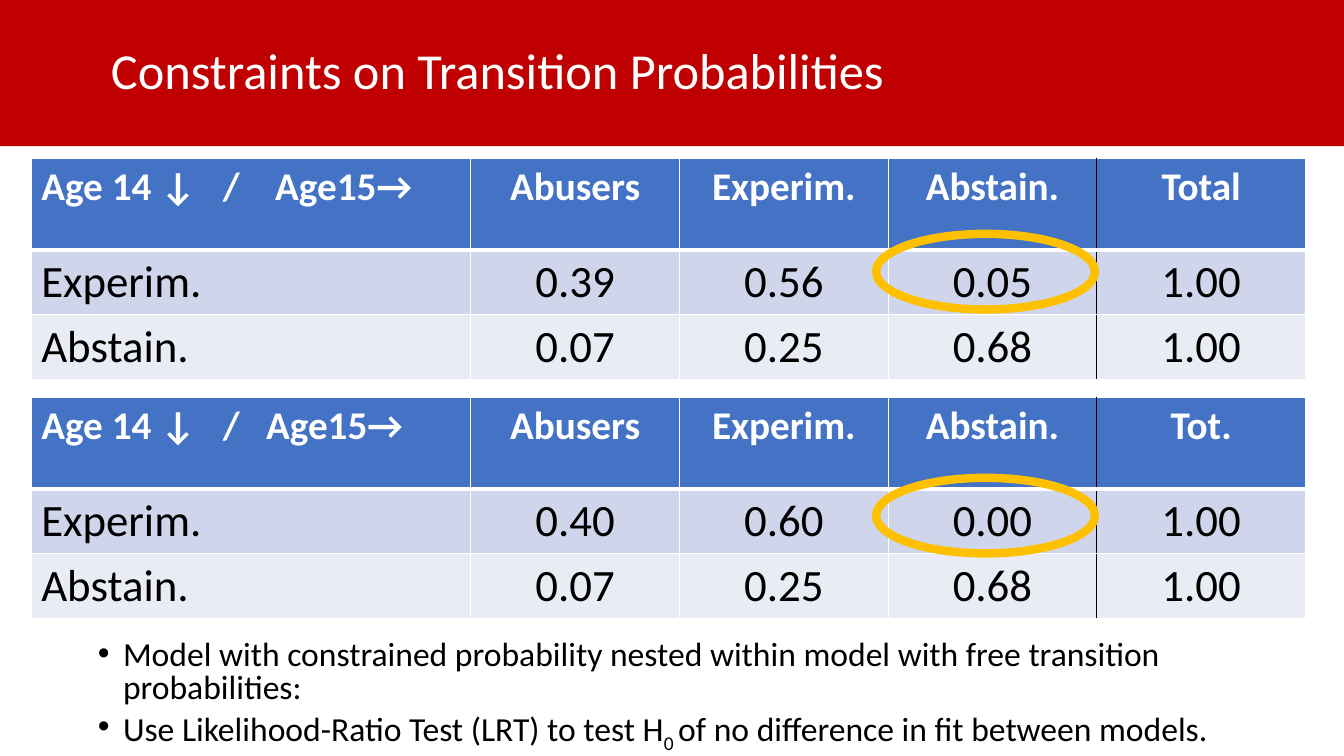
import pptx
import pptx.dml.color
import pptx.enum.shapes
import pptx.enum.text
import pptx.oxml
import pptx.oxml.ns
import pptx.util
from pptx.util import Inches

RGBColor = pptx.dml.color.RGBColor
RED = RGBColor(0xC0, 0x00, 0x00)
WHITE = RGBColor(0xFF, 0xFF, 0xFF)
BLACK = RGBColor(0x00, 0x00, 0x00)
BLUE = RGBColor(0x44, 0x72, 0xC4)
BAND_DARK = RGBColor(0xCF, 0xD5, 0xEA)
BAND_LIGHT = RGBColor(0xE9, 0xEB, 0xF5)
GOLD = RGBColor(0xFF, 0xC0, 0x00)

FONT = "Calibri"
ALIGN = pptx.enum.text.PP_ALIGN
ROW_FILLS = [BLUE, BAND_DARK, BAND_LIGHT]
COLUMN_WIDTHS = [4.36] + [2.07] * 4
ROW_HEIGHTS = [0.91, 0.64, 0.64]
TOTAL_COLUMN = 4


def add_text(paragraph, text, size=24, color=BLACK, bold=False, baseline=0):
    """Append a formatted run to a paragraph."""
    run = paragraph.add_run()
    run.text = text
    run.font.name = FONT
    run.font.size = pptx.util.Pt(size)
    run.font.color.rgb = color
    run.font.bold = bold
    if baseline:
        run._r.get_or_add_rPr().set("baseline", str(baseline * 1000))


def add_xml(parent, xml):
    """Append a DrawingML element given as markup to a parent element."""
    namespace = pptx.oxml.ns.nsdecls("a")
    parent.append(pptx.oxml.parse_xml(xml.replace(" ", f" {namespace} ", 1)))


def set_tab_stops(paragraph, positions):
    """Give a paragraph left tab stops at positions in inches."""
    stops = "".join(f'<a:tab pos="{Inches(p)}" algn="l"/>' for p in positions)
    add_xml(paragraph._p.get_or_add_pPr(), f"<a:tabLst >{stops}</a:tabLst>")


def set_bullet(paragraph):
    """Format a paragraph as a second-level bullet with a hanging indent."""
    paragraph.level = 1
    paragraph.line_spacing = 0.8
    paragraph.space_before = pptx.util.Pt(5)
    properties = paragraph._p.get_or_add_pPr()
    properties.set("marL", str(Inches(0.75)))
    properties.set("indent", str(Inches(-0.25)))
    add_xml(properties, '<a:buFont typeface="Arial"/>')
    add_xml(properties, '<a:buChar char="•"/>')


def set_borders(cell, row, column):
    """Draw white cell borders, with a black rule before the total column."""
    for side in "LRTB":
        before_total = (side, column) in [("R", TOTAL_COLUMN - 1), ("L", TOTAL_COLUMN)]
        color = BLACK if before_total else WHITE
        under_header = (side, row) in [("B", 0), ("T", 1)]
        width = pptx.util.Pt(3 if under_header else 1)
        add_xml(
            cell._tc.get_or_add_tcPr(),
            f'<a:ln{side} w="{width}"><a:solidFill><a:srgbClr val="{color}"/>'
            f"</a:solidFill></a:ln{side}>",
        )


def place(shape, left, top, width, height):
    """Set the position and size of a shape in inches."""
    shape.left, shape.top = Inches(left), Inches(top)
    shape.width, shape.height = Inches(width), Inches(height)


def add_title(slide, text):
    """Turn the title placeholder into a red banner."""
    title = slide.shapes.title
    place(title, 0, 0, 13.33, 1.45)
    title.fill.solid()
    title.fill.fore_color.rgb = RED
    frame = title.text_frame
    frame.auto_size = pptx.enum.text.MSO_AUTO_SIZE.NONE
    frame.vertical_anchor = pptx.enum.text.MSO_ANCHOR.MIDDLE
    frame.margin_left = Inches(1.1)
    paragraph = frame.paragraphs[0]
    paragraph.alignment = ALIGN.LEFT
    paragraph.line_spacing = 0.9
    add_text(paragraph, text, size=36, color=WHITE)


def add_transition_table(slide, top, rows, corner_tabs):
    """Add a table of transition probabilities between the two ages."""
    table = slide.shapes.add_table(
        len(rows), len(COLUMN_WIDTHS), Inches(0.31), Inches(top),
        Inches(sum(COLUMN_WIDTHS)), Inches(sum(ROW_HEIGHTS)),
    ).table
    for column, width in zip(table.columns, COLUMN_WIDTHS):
        column.width = Inches(width)
    for table_row, height in zip(table.rows, ROW_HEIGHTS):
        table_row.height = Inches(height)
    for r, texts in enumerate(rows):
        for c, text in enumerate(texts):
            cell = table.cell(r, c)
            set_borders(cell, r, c)
            cell.fill.solid()
            cell.fill.fore_color.rgb = ROW_FILLS[r]
            paragraph = cell.text_frame.paragraphs[0]
            paragraph.alignment = ALIGN.CENTER if c else ALIGN.LEFT
            header = r == 0
            add_text(paragraph, text, size=28 if header else 32,
                     color=WHITE if header else BLACK, bold=header)
    set_tab_stops(table.cell(0, 0).text_frame.paragraphs[0], corner_tabs)


def add_highlight(slide, top):
    """Ring the probability of moving from experimenter to abstainer."""
    ring = slide.shapes.add_shape(
        pptx.enum.shapes.MSO_SHAPE.OVAL,
        Inches(8.69), Inches(top), Inches(2.17), Inches(0.75),
    )
    ring.shadow.inherit = False
    ring.fill.background()
    ring.line.color.rgb = GOLD
    ring.line.width = pptx.util.Pt(6)


def add_conclusions(slide):
    """Fill the body placeholder with the model comparison bullets."""
    body = slide.placeholders[1]
    place(body, 0.37, 6.31, 12.65, 1.16)
    frame = body.text_frame
    frame.auto_size = pptx.enum.text.MSO_AUTO_SIZE.NONE
    nesting = frame.paragraphs[0]
    set_bullet(nesting)
    add_text(nesting, "Model with constrained probability nested within model "
                      "with free transition probabilities:")
    testing = frame.add_paragraph()
    set_bullet(testing)
    add_text(testing, "Use Likelihood-Ratio Test (LRT) to test H")
    add_text(testing, "0 ", baseline=-25)
    add_text(testing, "of no difference in fit between models.")


def main():
    """Build and save the slide."""
    presentation = pptx.Presentation()
    presentation.slide_width = Inches(13.33)
    presentation.slide_height = Inches(7.5)
    slide = presentation.slides.add_slide(presentation.slide_layouts[1])

    add_title(slide, "Constraints on Transition Probabilities")
    header = ["Age 14 ↓\t/\tAge15→", "Abusers", "Experim.", "Abstain."]
    abstainers = ["Abstain.", "0.07", "0.25", "0.68", "1.00"]
    free = ["Experim.", "0.39", "0.56", "0.05", "1.00"]
    constrained = ["Experim.", "0.40", "0.60", "0.00", "1.00"]
    add_transition_table(slide, 1.57, [header + ["Total"], free, abstainers], [1.8, 2.32])
    add_highlight(slide, 2.32)
    add_transition_table(slide, 3.94, [header + ["Tot."], constrained, abstainers], [1.8, 2.23])
    add_highlight(slide, 4.74)
    add_conclusions(slide)

    presentation.save("out.pptx")


if __name__ == "__main__":
    main()
